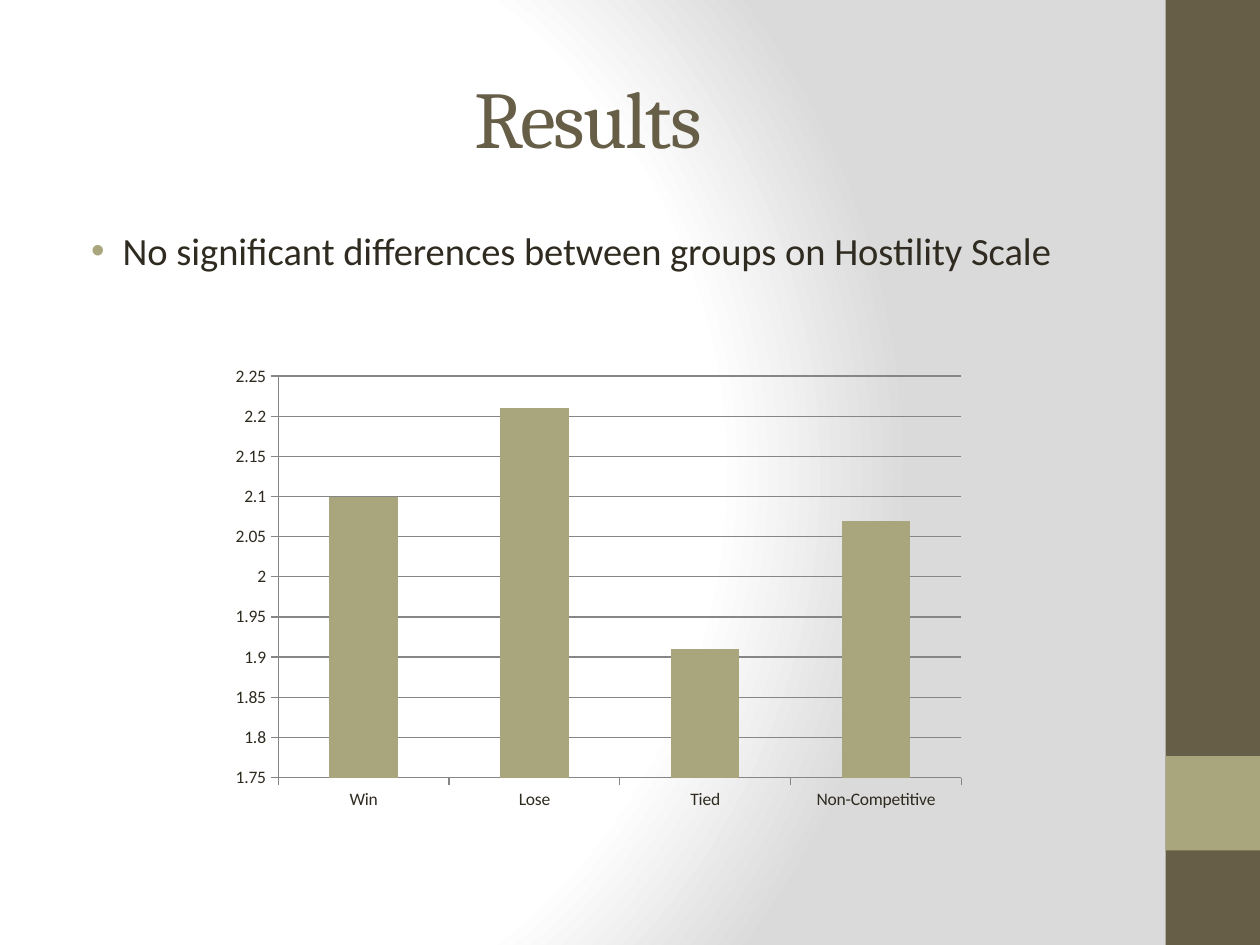
import dataclasses

import lxml.etree
import pptx
import pptx.chart.data
import pptx.dml.color
import pptx.enum.chart
import pptx.enum.shapes
import pptx.enum.text
import pptx.oxml
import pptx.oxml.ns
import pptx.util

Pt = pptx.util.Pt
RGB = pptx.dml.color.RGBColor
qn = pptx.oxml.ns.qn


@dataclasses.dataclass(frozen=True)
class Theme:
    dark: str = "675E47"
    accent: str = "A9A57C"
    text: str = "2F2B20"
    grid: str = "868686"
    glow: str = "FFFFFF"
    shade: str = "DADADA"
    heading_font: str = "Cambria"
    body_font: str = "Calibri"
    title_size: float = 46
    body_size: float = 22
    chart_size: float = 10


@dataclasses.dataclass(frozen=True)
class Box:
    left: float
    top: float
    width: float
    height: float

    def lengths(self) -> list:
        return [Pt(v) for v in dataclasses.astuple(self)]


@dataclasses.dataclass(frozen=True)
class Band:
    box: Box
    color: str


THEME = Theme()
BANDS = [
    Band(Box(666, 0, 54, 540), THEME.dark),
    Band(Box(666, 432, 54, 54), THEME.accent),
]
SCORES = {"Win": 2.1, "Lose": 2.21, "Tied": 1.91, "Non-Competitive": 2.07}


def set_background(slide) -> None:
    fill = slide.background.fill
    fill.gradient()
    grad = slide.element.find(".//" + qn("a:gradFill"))
    stops = "".join(
        f'<a:gs pos="{pos * 1000}"><a:srgbClr val="{color}"/></a:gs>'
        for pos, color in [(0, THEME.glow), (75, THEME.glow), (100, THEME.shade)]
    )
    grad.getparent().replace(grad, pptx.oxml.parse_xml(
        f'<a:gradFill {pptx.oxml.ns.nsdecls("a")} rotWithShape="1"><a:gsLst>{stops}</a:gsLst>'
        '<a:path path="circle"><a:fillToRect l="20000" t="50000" r="100000" b="50000"/>'
        "</a:path></a:gradFill>"
    ))


def add_band(slide, band: Band) -> None:
    sp = slide.shapes.add_shape(
        pptx.enum.shapes.MSO_SHAPE.RECTANGLE, *band.box.lengths())
    sp.shadow.inherit = False
    sp.fill.solid()
    sp.fill.fore_color.rgb = RGB.from_string(band.color)
    sp.line.fill.background()


def style_font(font, name: str, size: float, color: str) -> None:
    font.name = name
    font.size = Pt(size)
    font.color.rgb = RGB.from_string(color)


def add_text(slide, box: Box, text: str, font: str, size: float, color: str):
    tf = slide.shapes.add_textbox(*box.lengths()).text_frame
    tf.word_wrap = True
    p = tf.paragraphs[0]
    p.text = text
    style_font(p.font, font, size, color)
    return tf


def add_title(slide) -> None:
    tf = add_text(slide, Box(36, 21.6, 600, 90), "Results",
                  THEME.heading_font, THEME.title_size, THEME.dark)
    tf.vertical_anchor = pptx.enum.text.MSO_ANCHOR.MIDDLE
    p = tf.paragraphs[0]
    p.alignment = pptx.enum.text.PP_ALIGN.CENTER
    p.runs[0].font._element.set("spc", "-100")


def add_finding(slide) -> None:
    tf = add_text(slide, Box(36, 126, 600, 378),
                  "No significant differences between groups on Hostility Scale",
                  THEME.body_font, THEME.body_size, THEME.text)
    pPr = tf.paragraphs[0]._p.get_or_add_pPr()
    pPr.set("marL", str(Pt(27)))
    pPr.set("indent", str(Pt(-18)))
    bullet_color = lxml.etree.Element(qn("a:buClr"))
    lxml.etree.SubElement(bullet_color, qn("a:srgbClr"), val=THEME.accent)
    bullet_font = lxml.etree.Element(qn("a:buFont"), typeface="Arial")
    bullet = lxml.etree.Element(qn("a:buChar"), char="•")
    for i, el in enumerate([bullet_color, bullet_font, bullet]):
        pPr.insert(i, el)


def style_line(line) -> None:
    line.color.rgb = RGB.from_string(THEME.grid)
    line.width = Pt(0.75)


def add_score_chart(slide, box: Box) -> None:
    data = pptx.chart.data.CategoryChartData()
    data.categories = list(SCORES)
    data.add_series("Series 1", list(SCORES.values()))
    chart = slide.shapes.add_chart(
        pptx.enum.chart.XL_CHART_TYPE.COLUMN_STACKED, *box.lengths(), data).chart
    chart.has_legend = False
    chart.has_title = False
    style_font(chart.font, THEME.body_font, THEME.chart_size, THEME.text)

    plot = chart.plots[0]
    plot.gap_width = 150
    plot.overlap = 100
    plot.vary_by_categories = False
    fill = plot.series[0].format.fill
    fill.solid()
    fill.fore_color.rgb = RGB.from_string(THEME.accent)

    for axis in (chart.category_axis, chart.value_axis):
        axis.major_tick_mark = pptx.enum.chart.XL_TICK_MARK.OUTSIDE
        axis.minor_tick_mark = pptx.enum.chart.XL_TICK_MARK.NONE
        style_line(axis.format.line)
    axis = chart.value_axis
    axis.minimum_scale = 1.75
    axis.maximum_scale = 2.25
    axis.major_unit = 0.05
    axis.has_major_gridlines = True
    style_line(axis.major_gridlines.format.line)


def main() -> None:
    prs = pptx.Presentation()
    prs.slide_width, prs.slide_height = Pt(720), Pt(540)
    slide = prs.slides.add_slide(prs.slide_layouts[6])
    set_background(slide)
    for band in BANDS:
        add_band(slide, band)
    add_title(slide)
    add_finding(slide)
    add_score_chart(slide, Box(126, 204, 432, 264))
    prs.save("out.pptx")


if __name__ == "__main__":
    main()
